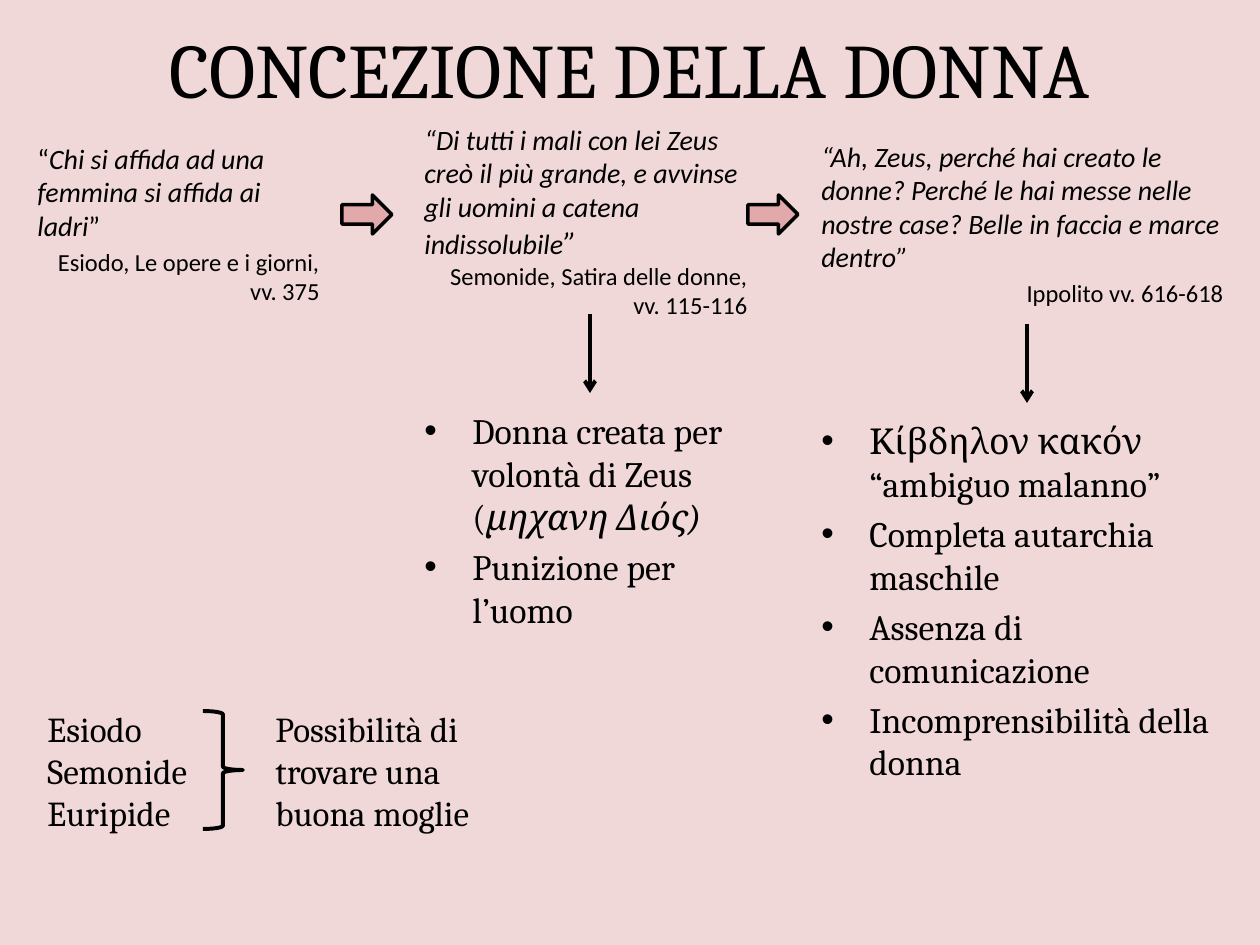
import pptx
import pptx.dml.color
import pptx.enum.shapes
import pptx.enum.text
import pptx.oxml
import pptx.oxml.ns
import pptx.util

PX = 914400 / 126
INK, ROSE, PALE_ROSE = "000000", "E1A9A9", "F1D8D8"
ALIGN = pptx.enum.text.PP_ALIGN
ANCHOR = pptx.enum.text.MSO_ANCHOR
SHAPE = pptx.enum.shapes.MSO_SHAPE
color = pptx.dml.color.RGBColor.from_string


def px(*lengths):
    return [round(length * PX) for length in lengths]


def add_text(paragraphs, place=None, box=None, font="Cambria", size=20, gap=0,
             bullet=False, anchor=ANCHOR.TOP):
    """Each paragraph is (alignment, spans); each span is (text, size or None, italic)."""
    box = box or page.shapes.add_textbox(*px(*place))
    frame = box.text_frame
    frame.word_wrap = True
    frame.vertical_anchor = anchor
    for number, (alignment, spans) in enumerate(paragraphs):
        para = frame.add_paragraph() if number else frame.paragraphs[0]
        para.alignment = alignment
        para.space_before = pptx.util.Pt(gap if number else 0)
        if bullet:
            props = para._p.get_or_add_pPr()
            indent = px(48)[0]
            props.set("marL", str(indent))
            props.set("indent", str(-indent))
            for tag, name, value in (("buFont", "typeface", "Arial"), ("buChar", "char", "•")):
                mark = pptx.oxml.parse_xml(
                    f'<a:{tag} {pptx.oxml.ns.nsdecls("a")} {name}="{value}"/>')
                props.append(mark)
        for text, span_size, italic in spans:
            span = para.add_run()
            span.text = text
            span.font.name = font
            span.font.size = pptx.util.Pt(span_size or size)
            span.font.italic = italic
            span.font.color.rgb = color(INK)


deck = pptx.Presentation()
deck.slide_width, deck.slide_height = px(1260, 945)
page = deck.slides.add_slide(deck.slide_layouts[5])
page.background.fill.solid()
page.background.fill.fore_color.rgb = color(PALE_ROSE)

# Title
title = page.shapes.title
title.left, title.top, title.width, title.height = px(63, 0, 1134, 135)
add_text([(ALIGN.CENTER, [("CONCEZIONE DELLA DONNA", 44, False)])],
         box=title, anchor=ANCHOR.MIDDLE)

# Quotations with their sources
quotes = [
    ((25, 135, 307, 208), ANCHOR.TOP, 2.8,
     [("“", 16, False), ("Chi si affida ad una femmina si affida ai ladri", 16, True),
      ("”", 16, False)],
     "Esiodo, Le opere e i giorni, vv. 375"),
    ((412, 116, 348, 251), ANCHOR.TOP, 0,
     [("“Di tutti i mali con lei Zeus creò il più grande, e avvinse gli uomini "
       "a catena indissolubile", 16, True), ("”", 18, True)],
     "Semonide, Satira delle donne, vv. 115-116"),
    ((809, 106, 427, 208), ANCHOR.BOTTOM, 2.8,
     [("“Ah, Zeus, perché hai creato le donne? Perché le hai messe nelle nostre case? "
       "Belle in faccia e marce dentro”", 16, True)],
     "Ippolito vv. 616-618"),
]
for place, anchor, gap, quote, source in quotes:
    add_text([(ALIGN.LEFT, quote), (ALIGN.RIGHT, [(source, 14, False)])],
             place, font="Calibri", gap=gap, anchor=anchor)

# Bulleted themes
themes = [
    ((412, 403, 357, 238),
     [[("Donna creata per volontà di Zeus (", None, False), ("μηχανη Διός)", None, True)],
      [("Punizione per l’uomo", None, False)]]),
    ((809, 413, 426, 318),
     [[(text, None, False)] for text in (
         "Κίβδηλον κακόν “ambiguo malanno”", "Completa autarchia maschile",
         "Assenza di comunicazione", "Incomprensibilità della donna")]),
]
for place, items in themes:
    add_text([(ALIGN.LEFT, spans) for spans in items], place, size=20.4, gap=4, bullet=True)

# Authors, brace and conclusion
add_text([(ALIGN.LEFT, [(name, None, False)]) for name in ("Esiodo", "Semonide", "Euripide")],
         (35, 701, 248, 140))
add_text([(ALIGN.LEFT, [("Possibilità di trovare una buona moglie", None, False)])],
         (263, 701, 268, 140))
brace = page.shapes.add_shape(SHAPE.RIGHT_BRACE, *px(203, 711, 40, 118))
brace.shadow.inherit = False
brace.fill.background()
brace.line.color.rgb = color(INK)
brace.line.width = pptx.util.Pt(2.25)

# Block arrows between quotations
for left in (342, 748):
    arrow = page.shapes.add_shape(SHAPE.RIGHT_ARROW, *px(left, 195, 50, 39))
    arrow.shadow.inherit = False
    arrow.fill.solid()
    arrow.fill.fore_color.rgb = color(ROSE)
    arrow.line.color.rgb = color(INK)
    arrow.line.width = pptx.util.Pt(2)

# Arrows from quotations down to themes
for x, top in ((590, 314), (1027, 324)):
    link = page.shapes.add_connector(
        pptx.enum.shapes.MSO_CONNECTOR.STRAIGHT, *px(x, top, x, top + 79))
    link.line.color.rgb = color(INK)
    link.line.width = pptx.util.Pt(2.25)
    for parent, tag in ((link.line._get_or_add_ln(), 'tailEnd type="arrow"'),
                        (link._element.spPr, "effectLst")):
        name, _, attributes = tag.partition(" ")
        parent.append(pptx.oxml.parse_xml(
            f'<a:{name} {pptx.oxml.ns.nsdecls("a")} {attributes}/>'))

deck.save("out.pptx")
